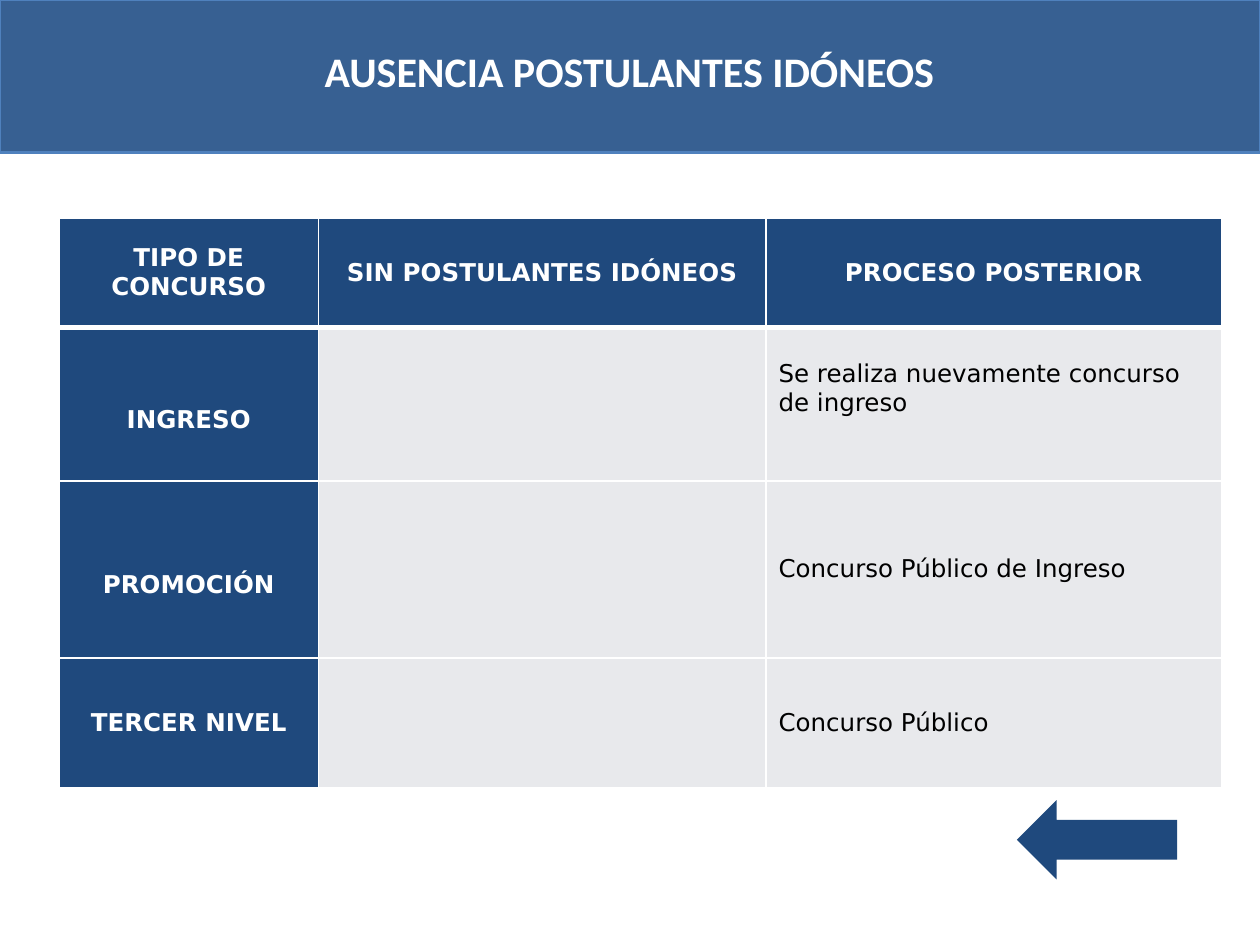
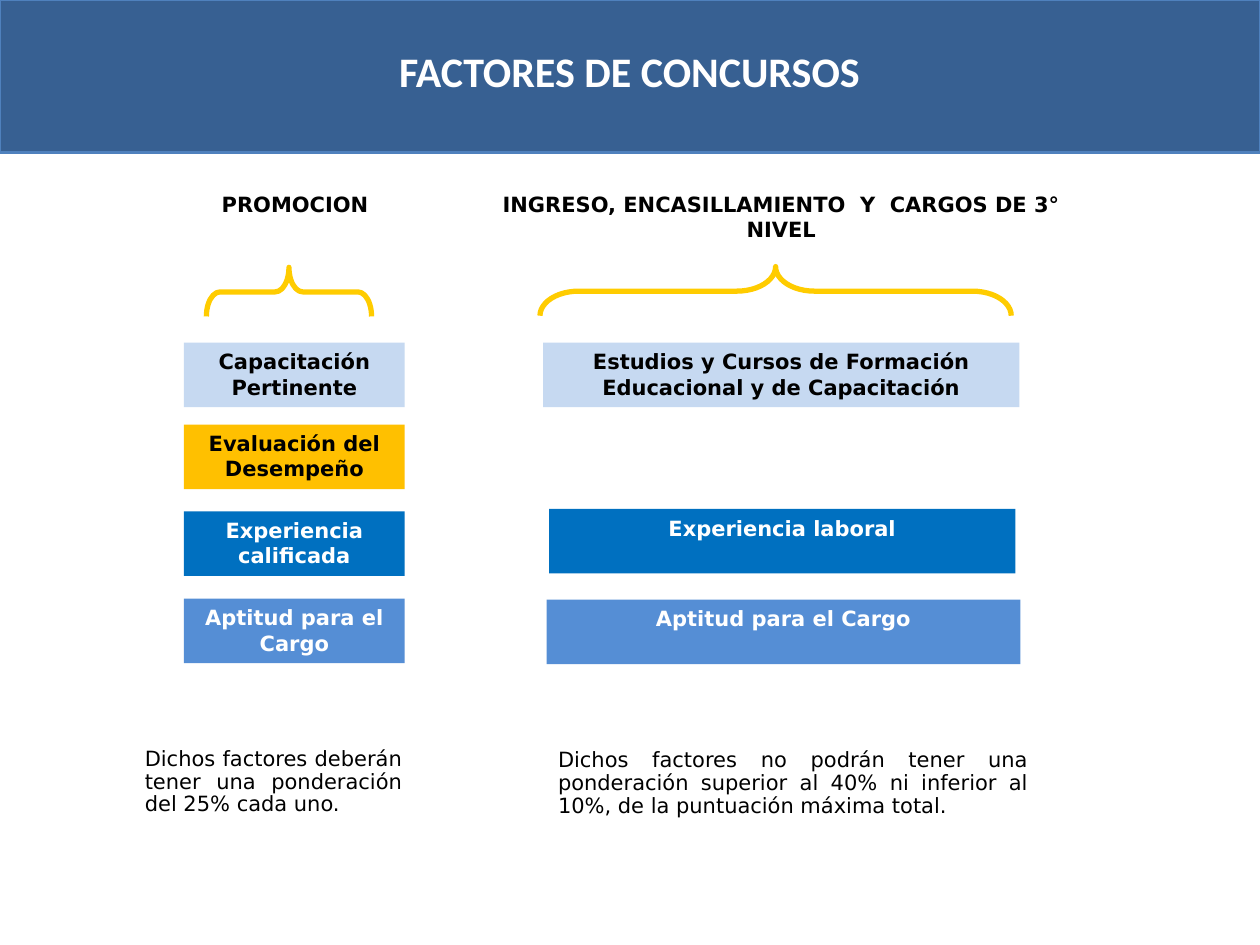
from dataclasses import dataclass

from pptx import Presentation
from pptx import util as u
from pptx.dml.color import RGBColor
from pptx.enum import shapes, text
from pptx.oxml import parse_xml
from pptx.oxml.ns import nsdecls

Cm, Pt = u.Cm, u.Pt
KIND, ALIGN, ANCHOR = shapes.MSO_SHAPE, text.PP_ALIGN, text.MSO_ANCHOR


@dataclass(frozen=True)
class Theme:
    band: str = "376092"
    edge: str = "4F81BD"
    navy: str = "1F497D"
    grey: str = "E8E9EC"
    pale: str = "C6D9F1"
    amber: str = "FFC000"
    blue: str = "0070C0"
    sky: str = "558ED5"
    brace: str = "FFCC00"
    white: str = "FFFFFF"
    black: str = "000000"
    head: str = "Calibri"
    body: str = "DejaVu Sans"
    title: int = 24
    table: int = 14
    label: int = 12


T = Theme()


def rgb(code):
    return RGBColor.from_string(code)


def style(frame, words, size, color, bold=False, align=ALIGN.CENTER, font=T.body):
    """Put words in a text frame and format them."""
    frame.text = words
    for par in frame.paragraphs:
        par.alignment = align
        for run in par.runs:
            run.font.name = font
            run.font.size = Pt(size)
            run.font.bold = bold
            run.font.color.rgb = rgb(color)


def shape(slide, kind, spot, fill=None, line=None, width=1.5):
    form = slide.shapes.add_shape(kind, *map(Cm, spot))
    form.shadow.inherit = False
    if fill:
        form.fill.solid()
        form.fill.fore_color.rgb = rgb(fill)
    else:
        form.fill.background()
    if line:
        form.line.color.rgb = rgb(line)
        form.line.width = Pt(width)
    else:
        form.line.fill.background()
    return form


def label(slide, spot, words, wrap=True, **look):
    frame = slide.shapes.add_textbox(*map(Cm, spot)).text_frame
    frame.word_wrap = wrap
    look = {"size": T.label, "color": T.black, **look}
    style(frame, words, **look)
    return frame


def start(deck, title):
    """Add a blank slide with the title band."""
    slide = deck.slides.add_slide(deck.slide_layouts[6])
    shape(slide, KIND.RECTANGLE, (0, 0, 25.4, 3.07), T.band, T.edge)
    label(slide, (1.12, 0.79, 23.14, 2.08), title, size=T.title,
          color=T.white, bold=True, font=T.head)
    return slide


def factor(slide, spot, words, fill, color):
    box = shape(slide, KIND.RECTANGLE, spot, fill)
    box.text_frame.vertical_anchor = ANCHOR.TOP
    style(box.text_frame, words, T.label, color, bold=True)


def brace(slide, spot, bend):
    form = shape(slide, KIND.LEFT_BRACE, spot, line=T.brace, width=3)
    form.rotation = 90
    form.adjustments[0] = bend


def note(slide, spot, words):
    frame = label(slide, spot, words, align=ALIGN.JUSTIFY)
    frame.paragraphs[0].line_spacing = 0.9


def border(cell, widths):
    """Draw white cell edges; widths are in points by side."""
    props = cell._tc.get_or_add_tcPr()
    for side, width in widths.items():
        props.append(parse_xml(
            f'<a:ln{side} {nsdecls("a")} w="{Pt(width)}"><a:solidFill>'
            f'<a:srgbClr val="{T.white}"/></a:solidFill></a:ln{side}>'))


def grid(slide, spot, cols, rows, data):
    """Table with a dark first row and first column."""
    size = (sum(cols), sum(rows))
    table = slide.shapes.add_table(len(rows), len(cols),
                                   *map(Cm, spot + size)).table
    for col, width in zip(table.columns, cols):
        col.width = Cm(width)
    for row, height in zip(table.rows, rows):
        row.height = Cm(height)
    for r, line in enumerate(data):
        for c, words in enumerate(line):
            cell = table.cell(r, c)
            dark = r == 0 or c == 0
            border(cell, {"L": 1, "R": 1, "T": 3 if r == 1 else 1,
                          "B": 3 if r == 0 else 1})
            cell.fill.solid()
            cell.fill.fore_color.rgb = rgb(T.navy if dark else T.grey)
            cell.vertical_anchor = ANCHOR.MIDDLE
            if words:
                style(cell.text_frame, words, T.table,
                      T.white if dark else T.black, dark,
                      ALIGN.CENTER if dark else ALIGN.LEFT)
    return table


def absence(deck):
    slide = start(deck, "AUSENCIA POSTULANTES IDÓNEOS")
    table = grid(slide, (1.19, 4.39), (5.23, 9.02, 9.19), (2.21, 3.1, 3.56, 2.62), [
        ("TIPO DE CONCURSO", "SIN POSTULANTES IDÓNEOS", "PROCESO POSTERIOR"),
        ("INGRESO", "", "Se realiza nuevamente concurso de ingreso"),
        ("PROMOCIÓN", "", "Concurso Público de Ingreso"),
        ("TERCER NIVEL", "", "Concurso Público"),
    ])
    for row in (1, 2):
        table.cell(row, 0).margin_top = Cm(0.75)
    table.cell(1, 2).margin_bottom = Cm(0.75)
    shape(slide, KIND.LEFT_ARROW, (20.5, 16.13, 3.23, 1.6), T.navy)


def factors(deck):
    slide = start(deck, "FACTORES DE CONCURSOS")
    label(slide, (4.17, 3.73, 3.56, 0.76), "PROMOCION", wrap=False, bold=True)
    label(slide, (9.63, 3.73, 12.24, 1.3),
          "INGRESO, ENCASILLAMIENTO  Y  CARGOS DE 3° NIVEL", bold=True)
    brace(slide, (5.33, 4.22, 0.99, 3.33), 0.28)
    brace(slide, (15.14, 1.12, 0.99, 9.5), 0.79)

    tall = 1.3
    for top, words, fill, color in (
        (6.91, "Capacitación Pertinente", T.pale, T.black),
        (8.56, "Evaluación del Desempeño", T.amber, T.black),
        (10.31, "Experiencia calificada", T.blue, T.white),
        (12.07, "Aptitud para el Cargo", T.sky, T.white),
    ):
        factor(slide, (3.71, top, 4.45, tall), words, fill, color)
    for left, top, wide, words, fill, color in (
        (10.95, 6.91, 9.6,
         "Estudios y Cursos de Formación Educacional y de Capacitación",
         T.pale, T.black),
        (11.07, 10.26, 9.4, "Experiencia laboral", T.blue, T.white),
        (11.02, 12.09, 9.55, "Aptitud para el Cargo", T.sky, T.white),
    ):
        factor(slide, (left, top, wide, tall), words, fill, color)

    note(slide, (2.67, 14.96, 5.69, 2.72),
         "Dichos factores deberán tener una ponderación del 25% cada uno.")
    note(slide, (11, 14.99, 9.98, 2.72),
         "Dichos factores no podrán tener una ponderación superior al 40% "
         "ni inferior al 10%, de la puntuación máxima total.")


def main():
    deck = Presentation()
    deck.slide_width, deck.slide_height = Cm(25.4), Cm(19.05)
    absence(deck)
    factors(deck)
    deck.save("out.pptx")


if __name__ == "__main__":
    main()
